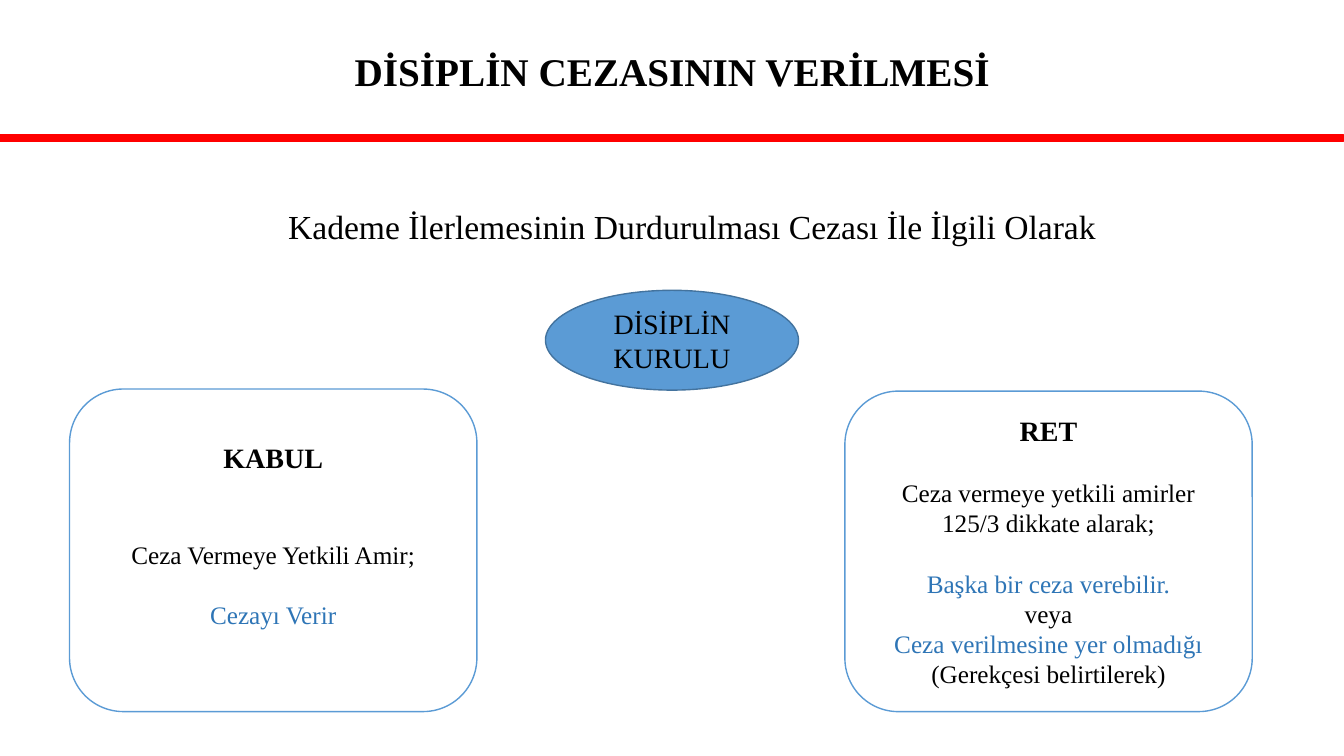
from pptx import Presentation
from pptx.dml.color import RGBColor
from pptx.enum.shapes import MSO_SHAPE as Kind
from pptx.enum.text import MSO_ANCHOR as Anchor, PP_ALIGN as Align
from pptx.util import Inches, Pt

BLACK = RGBColor(0x00, 0x00, 0x00)
WHITE = RGBColor(0xFF, 0xFF, 0xFF)
RED = RGBColor(0xFF, 0x00, 0x00)
BLUE = RGBColor(0x5B, 0x9B, 0xD5)
NAVY = RGBColor(0x43, 0x73, 0x9E)
INK = RGBColor(0x2E, 0x75, 0xB6)


def write(shape, rows, anchor=Anchor.MIDDLE):
    """Fill a shape with centred rows of (runs, space before, font format)."""
    frame = shape.text_frame
    frame.word_wrap = True
    frame.vertical_anchor = anchor
    for i, (runs, gap, form) in enumerate(rows):
        para = frame.add_paragraph() if i else frame.paragraphs[0]
        para.alignment = Align.CENTER
        if gap:
            para.space_before = Pt(gap)
        for text, color in runs:
            run = para.add_run()
            run.text = text
            run.font.color.rgb = color
            for name, value in ({"name": "Times New Roman"} | form).items():
                setattr(run.font, name, value)


def draw(kind, box, fill, line, width=1):
    shape = slide.shapes.add_shape(kind, *map(Inches, box))
    shape.shadow.inherit = False
    shape.fill.solid()
    shape.fill.fore_color.rgb = fill
    shape.line.color.rgb = line
    shape.line.width = Pt(width)
    return shape


deck = Presentation()
deck.slide_width, deck.slide_height = Inches(13.33), Inches(7.5)
slide = deck.slides.add_slide(deck.slide_layouts[5])

HEAD = {"size": Pt(20), "bold": True}
BODY = {"size": Pt(18), "bold": False}

# Title and red rule
title = slide.shapes.title
place = {"left": 0, "top": 0, "width": 13.33, "height": 1.46}
for name, value in place.items():
    setattr(title, name, Inches(value))
write(title, [([("DİSİPLİN CEZASININ VERİLMESİ", BLACK)], 0,
               {"size": Pt(28), "bold": True})])
title.text_frame.paragraphs[0].line_spacing = 0.9
draw(Kind.RECTANGLE, (0, 1.34, 13.33, 0.05), RED, RED, 2.25)

# Topic
topic = slide.shapes.add_textbox(*map(Inches, (0.54, 1.99, 12.65, 0.5)))
write(topic, [([("Kademe İlerlemesinin Durdurulması Cezası İle İlgili Olarak", BLACK)],
               0, {"size": Pt(24)})], Anchor.TOP)

# Outcomes: accepted on the left, rejected on the right
accept = draw(Kind.ROUNDED_RECTANGLE, (0.69, 3.86, 4.04, 3.2), WHITE, BLUE)
accept.text_frame.margin_bottom = Inches(0.35)
write(accept, [
    ([("KABUL", BLACK)], 0, HEAD),
    ([("Ceza Vermeye Yetkili Amir;", BLACK)], 46, BODY),
    ([("Cezayı Verir", INK)], 21.5, BODY),
])

reject = draw(Kind.ROUNDED_RECTANGLE, (8.38, 3.88, 4.04, 3.18), WHITE, BLUE)
write(reject, [
    ([("RET", BLACK)], 0, HEAD),
    ([("Ceza vermeye yetkili amirler 125/3 dikkate alarak;", BLACK)], 21.5, BODY),
    ([("Başka bir ceza verebilir.", INK)], 21.5, BODY),
    ([("veya", BLACK)], 0, BODY),
    ([("Ceza verilmesine yer olmadığı ", INK),
      ("(Gerekçesi belirtilerek)", BLACK)], 0, BODY),
])

# Board that decides
board = draw(Kind.OVAL, (5.41, 2.88, 2.51, 0.99), BLUE, NAVY)
write(board, [([("DİSİPLİN KURULU", BLACK)], 0, {"size": Pt(20)})])

deck.save("out.pptx")
